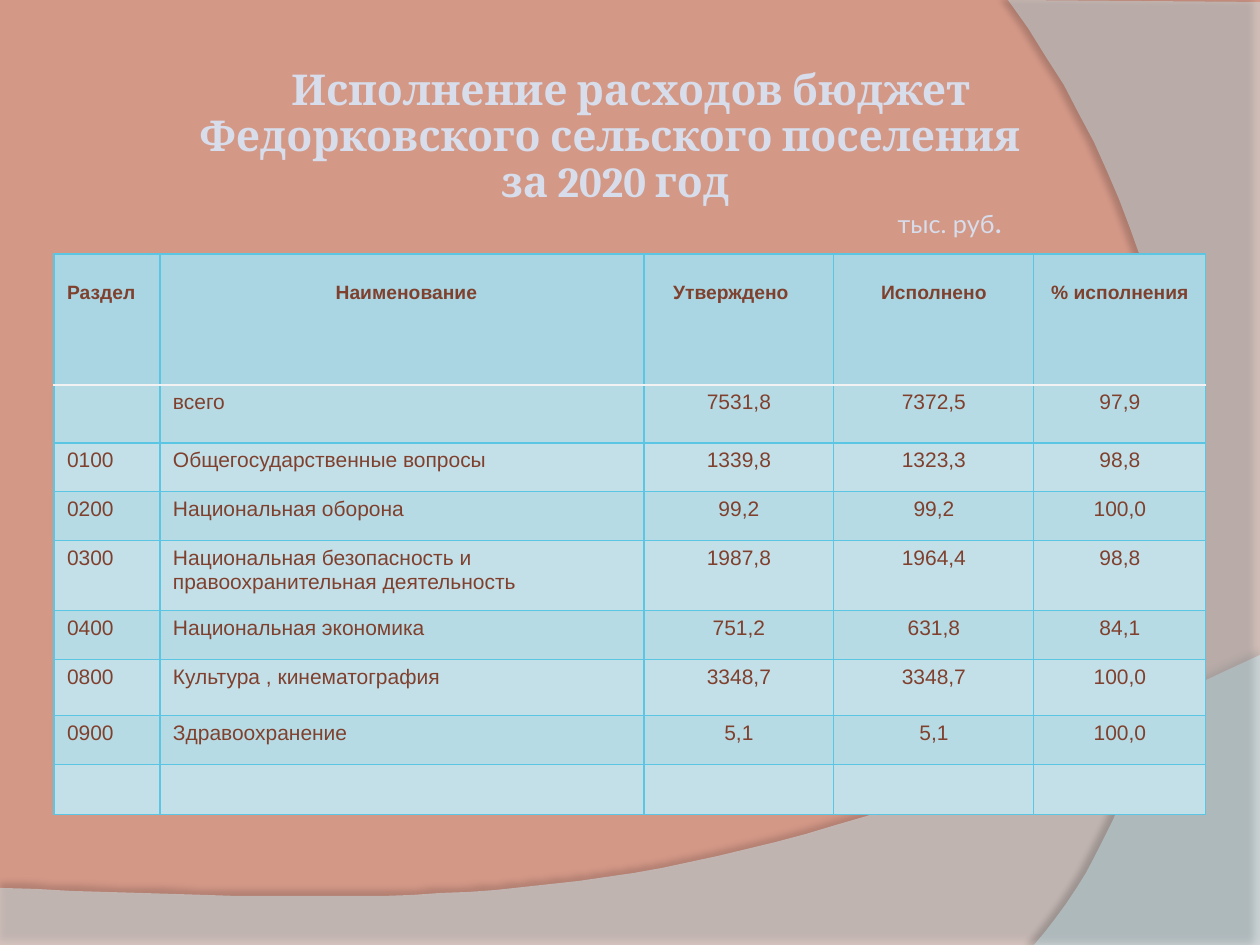
import lxml.etree
import pptx
import pptx.dml.color
import pptx.enum.text
import pptx.oxml
import pptx.oxml.ns
import pptx.util

RGBColor = pptx.dml.color.RGBColor
Align = pptx.enum.text.PP_ALIGN
Anchor = pptx.enum.text.MSO_ANCHOR
qn = pptx.oxml.ns.qn

PX = 914400 // 126  # EMU in one px

BACKGROUND = RGBColor(0xD4, 0x98, 0x87)
WAVE_BOTTOM = RGBColor(0xD3, 0xF4, 0xFE)
WAVE_RIGHT = RGBColor(0xCB, 0xF4, 0xFF)
TITLE = RGBColor(0xD7, 0xDD, 0xEB)
TABLE_TEXT = RGBColor(0x80, 0x40, 0x2E)
HEADER_FILL = RGBColor(0xA9, 0xD6, 0xE2)
BAND_FILLS = (RGBColor(0xB7, 0xDB, 0xE4), RGBColor(0xC3, 0xE0, 0xE9))
GRID = RGBColor(0x5A, 0xC6, 0xE3)
HEADER_RULE = RGBColor(0xF2, 0xF2, 0xF2)

COLUMN_WIDTHS = (106, 484, 190, 200, 172)
ROW_HEIGHTS = (131, 58, 49, 49, 70, 49, 56, 49, 49)
ROWS = (
    ("Раздел", "Наименование", "Утверждено", "Исполнено", "% исполнения"),
    ("", "всего", "7531,8", "7372,5", "97,9"),
    ("0100", "Общегосударственные вопросы", "1339,8", "1323,3", "98,8"),
    ("0200", "Национальная оборона", "99,2", "99,2", "100,0"),
    ("0300", "Национальная безопасность и правоохранительная деятельность",
     "1987,8", "1964,4", "98,8"),
    ("0400", "Национальная экономика", "751,2", "631,8", "84,1"),
    ("0800", "Культура , кинематография", "3348,7", "3348,7", "100,0"),
    ("0900", "Здравоохранение", "5,1", "5,1", "100,0"),
    ("", "", "", "", ""),
)


def bezier(start, control_1, control_2, end, steps=40):
    """Points of a cubic curve, without its start."""
    points = []
    for step in range(1, steps + 1):
        t = step / steps
        weights = ((1 - t) ** 3, 3 * t * (1 - t) ** 2, 3 * t * t * (1 - t), t ** 3)
        corners = (start, control_1, control_2, end)
        points.append(tuple(sum(w * c[axis] for w, c in zip(weights, corners))
                            for axis in (0, 1)))
    return points


def add_run(paragraph, text, size, font, color, bold=False):
    run = paragraph.add_run()
    run.text = text
    run.font.size = pptx.util.Pt(size)
    run.font.name = font
    run.font.bold = bold
    run.font.color.rgb = color


def add_wave(slide, left, top, points, color, opacity, shadow):
    """Translucent outline; shadow is opacity, blur, distance, direction."""
    builder = slide.shapes.build_freeform(*points[0], scale=PX)
    builder.add_line_segments(points[1:], close=True)
    shape = builder.convert_to_shape(left * PX, top * PX)
    shape.fill.solid()
    shape.fill.fore_color.rgb = color
    shape.line.fill.background()
    fill_color = shape.fill._xPr.find(qn("a:solidFill"))[0]
    lxml.etree.SubElement(fill_color, qn("a:alpha"), val=str(opacity * 1000))

    shape.shadow.inherit = False
    shadow_opacity, blur, distance, direction = shadow
    effects = shape._element.spPr.find(qn("a:effectLst"))
    outer = lxml.etree.SubElement(
        effects, qn("a:outerShdw"), blurRad=str(int(blur * 12700)),
        dist=str(int(distance * 12700)), dir=str(direction * 60000),
        algn="ctr", rotWithShape="0")
    black = lxml.etree.SubElement(outer, qn("a:srgbClr"), val="000000")
    lxml.etree.SubElement(black, qn("a:alpha"), val=str(shadow_opacity * 1000))


def add_waves(slide):
    bottom = [(0, 233), (0, 291), (1260, 291), (1260, 0)]
    bottom += bezier((1260, 0), (704, 264), (493, 251), (0, 233))
    add_wave(slide, 0, 655, bottom, WAVE_BOTTOM, 45, (35, 4, 3.5, 270))
    right = [(252, 2), (252, 945), (26, 945)]
    right += bezier((26, 945), (170, 780), (275, 378), (0, 0))
    add_wave(slide, 1008, 0, right, WAVE_RIGHT, 40, (45, 4, 4, 180))


def add_title(slide, left, top, width, height):
    box = slide.shapes.add_textbox(left * PX, top * PX, width * PX, height * PX)
    frame = box.text_frame
    frame.word_wrap = True
    frame.vertical_anchor = Anchor.MIDDLE
    frame.margin_left = frame.margin_right = frame.margin_bottom = 6 * PX
    frame.margin_top = 14 * PX
    lines = (("Исполнение расходов бюджет", 42),
             ("Федорковского сельского поселения", 0),
             ("за 2020 год", 10))
    paragraph = frame.paragraphs[0]
    for text, indent in lines:
        paragraph.alignment = Align.CENTER
        paragraph.line_spacing = 0.9
        paragraph._p.get_or_add_pPr().set("marL", str(indent * PX))
        add_run(paragraph, text, 24.3, "Cambria", TITLE, bold=True)
        paragraph = frame.add_paragraph()

    # Unit of measure, set in from the right edge
    paragraph.alignment = Align.RIGHT
    paragraph.line_spacing = 0.9
    paragraph._p.get_or_add_pPr().set("marR", str(168 * PX))
    add_run(paragraph, "тыс. руб", 14.4, "Lato", TITLE)
    add_run(paragraph, ".", 18, "Lato", TITLE)


def set_borders(cell, colors_and_widths):
    properties = cell._tc.get_or_add_tcPr()
    for index, (side, (color, width)) in enumerate(colors_and_widths.items()):
        line = lxml.etree.Element(qn("a:ln" + side), w=str(int(width * 12700)))
        fill = lxml.etree.SubElement(line, qn("a:solidFill"))
        lxml.etree.SubElement(fill, qn("a:srgbClr"), val=str(color))
        properties.insert(index, line)


def fill_cell(cell, text, row, column):
    header = row == 0
    cell.margin_left = cell.margin_right = 13 * PX
    cell.margin_top = (28 if header else 6) * PX
    cell.margin_bottom = 6 * PX
    if header and column == 1:
        cell.margin_left = 22 * PX
    if header and column == 2:
        cell.margin_right = 29 * PX
    if header and column == 4:
        cell.margin_left = cell.margin_right = 10 * PX

    cell.fill.solid()
    cell.fill.fore_color.rgb = HEADER_FILL if header else BAND_FILLS[(row - 1) % 2]
    grid, rule = (GRID, 0.75), (HEADER_RULE, 1.5)
    set_borders(cell, {"L": grid, "R": grid, "T": rule if row == 1 else grid,
                       "B": rule if header else grid})
    if text:
        paragraph = cell.text_frame.paragraphs[0]
        centred = column >= 2 or (header and column == 1)
        paragraph.alignment = Align.CENTER if centred else Align.LEFT
        add_run(paragraph, text, 11 if header else 12, "Arial", TABLE_TEXT, header)


def add_budget_table(slide, left, top):
    table = slide.shapes.add_table(
        len(ROWS), len(COLUMN_WIDTHS), left * PX, top * PX,
        sum(COLUMN_WIDTHS) * PX, sum(ROW_HEIGHTS) * PX).table
    for column, width in zip(table.columns, COLUMN_WIDTHS):
        column.width = width * PX
    for row, height in zip(table.rows, ROW_HEIGHTS):
        row.height = height * PX
    for row, texts in enumerate(ROWS):
        for column, text in enumerate(texts):
            fill_cell(table.cell(row, column), text, row, column)


def main():
    presentation = pptx.Presentation()
    presentation.slide_width = pptx.util.Inches(10)
    presentation.slide_height = pptx.util.Inches(7.5)
    slide = presentation.slides.add_slide(presentation.slide_layouts[6])
    slide.background.fill.solid()
    slide.background.fill.fore_color.rgb = BACKGROUND
    add_waves(slide)
    add_title(slide, 44, 116, 1132, 69)
    add_budget_table(slide, 54, 254)
    presentation.save("out.pptx")


if __name__ == "__main__":
    main()
